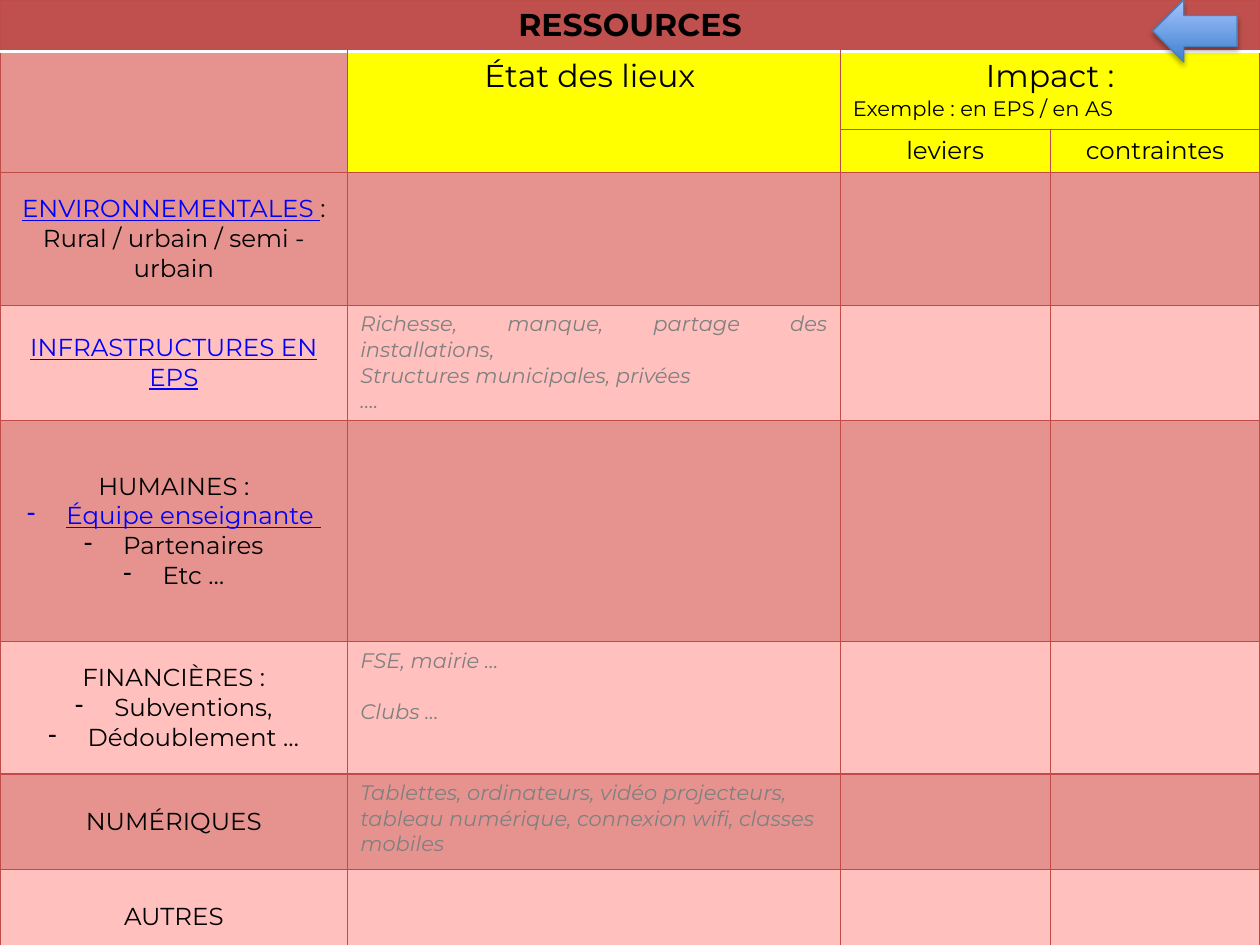
"""Build the RESSOURCES slide: a table of school resources and a back arrow."""
from dataclasses import dataclass

import lxml.etree
import pptx
import pptx.dml.color
import pptx.enum.shapes
import pptx.enum.text
import pptx.oxml
import pptx.oxml.ns
import pptx.table
import pptx.util

Cm = pptx.util.Cm
Pt = pptx.util.Pt
Align = pptx.enum.text.PP_ALIGN
Anchor = pptx.enum.text.MSO_ANCHOR
qn = pptx.oxml.ns.qn


@dataclass(frozen=True)
class Theme:
    font: str = "Montserrat"
    title_size: int = 18
    label_size: int = 14
    note_size: int = 12
    text: str = "000000"
    link: str = "0000FF"
    note: str = "808080"
    title_fill: str = "C0504D"
    header_fill: str = "FFFF00"
    dark_band: str = "E69390"
    light_band: str = "FFC0BE"
    border: str = "BF4C48"
    title_rule: str = "FFFFFF"
    border_width: float = 0.75
    title_rule_width: float = 2
    arrow_bottom: str = "3F80CE"
    arrow_top: str = "A4C4FF"
    arrow_line: str = "4B7EBC"


THEME = Theme()


@dataclass(frozen=True)
class Line:
    text: str = ""
    link: str = ""
    size: int = THEME.label_size
    color: str = THEME.text
    align: Align = Align.CENTER
    bold: bool = False
    italic: bool = False
    bullet: bool = False
    space_before: float = 0


@dataclass(frozen=True)
class Resource:
    height: float
    label: tuple[Line, ...]
    notes: tuple[Line, ...] = ()


def note(text: str, align: Align = Align.LEFT, space_before: float = 0) -> Line:
    return Line(text, size=THEME.note_size, color=THEME.note, align=align,
                italic=True, space_before=space_before)


COLUMN_WIDTHS = (7.01, 9.93, 4.23, 4.23)
HEADER_HEIGHTS = (1.02, 1.58, 0.87)
HEADERS = {
    (0, 0): (Line("RESSOURCES", size=THEME.title_size, bold=True),),
    (1, 1): (Line("État des lieux ", size=THEME.title_size),),
    (1, 2): (Line("Impact :", size=THEME.title_size),
             Line("Exemple : en EPS / en AS", size=THEME.note_size, align=Align.LEFT)),
    (2, 2): (Line("leviers"),),
    (2, 3): (Line("contraintes"),),
}
MERGES = (((0, 0), (0, 3)), ((1, 0), (2, 0)), ((1, 1), (2, 1)), ((1, 2), (1, 3)))
RESOURCES = (
    Resource(2.67, (Line(": Rural / urbain / semi - urbain", link="ENVIRONNEMENTALES "),)),
    Resource(2.32, (Line(link="INFRASTRUCTURES EN EPS"),), (
        note("Richesse, manque, partage des installations,", Align.JUSTIFY),
        note("Structures municipales, privées", Align.JUSTIFY),
        note("….", Align.JUSTIFY))),
    Resource(4.46, (Line("HUMAINES :"), Line(link="Équipe enseignante ", bullet=True),
                    Line("Partenaires", bullet=True), Line("Etc …", bullet=True))),
    Resource(2.67, (Line("FINANCIÈRES :"), Line("Subventions,", bullet=True),
                    Line("Dédoublement …", bullet=True)),
             (note("FSE, mairie …"), note("Clubs …", space_before=14.6))),
    Resource(1.92, (Line("NUMÉRIQUES"),), (
        note("Tablettes, ordinateurs, vidéo projecteurs, tableau numérique, "
             "connexion wifi, classes mobiles"),)),
    Resource(1.9, (Line("AUTRES"),)),
)


def rgb(color: str) -> pptx.dml.color.RGBColor:
    return pptx.dml.color.RGBColor.from_string(color)


def write_lines(cell: pptx.table._Cell, lines: tuple[Line, ...]) -> None:
    frame = cell.text_frame
    for index, line in enumerate(lines):
        paragraph = frame.add_paragraph() if index else frame.paragraphs[0]
        paragraph.alignment = line.align
        paragraph.space_before = Pt(line.space_before)
        if line.bullet:
            properties = paragraph._p.get_or_add_pPr()
            properties.set("marL", str(Cm(0.79)))
            properties.set("indent", str(Cm(-0.79)))
            lxml.etree.SubElement(properties, qn("a:buChar")).set("char", "-")
        paragraph.font.name = THEME.font
        paragraph.font.size = Pt(line.size)
        paragraph.font.bold = line.bold
        paragraph.font.italic = line.italic
        paragraph.font.color.rgb = rgb(line.color)
        if line.link:
            link = paragraph.add_run()
            link.text = line.link
            link.font.underline = True
            link.font.color.rgb = rgb(THEME.link)
        if line.text:
            paragraph.add_run().text = line.text


def style_cell(cell: pptx.table._Cell, row: int, fill: str) -> None:
    properties = cell._tc.get_or_add_tcPr()
    for side in "LRTB":
        on_title_rule = (row, side) in ((0, "B"), (1, "T"))
        color = THEME.title_rule if on_title_rule else THEME.border
        width = THEME.title_rule_width if on_title_rule else THEME.border_width
        border = lxml.etree.SubElement(properties, qn(f"a:ln{side}"), w=str(Pt(width)))
        solid = lxml.etree.SubElement(border, qn("a:solidFill"))
        lxml.etree.SubElement(solid, qn("a:srgbClr"), val=color)
    cell.fill.solid()
    cell.fill.fore_color.rgb = rgb(fill)


def fill_for(row: int, column: int) -> str:
    if row == 0:
        return THEME.title_fill
    if row < len(HEADER_HEIGHTS):
        return THEME.header_fill if column else THEME.dark_band
    return THEME.light_band if (row - len(HEADER_HEIGHTS)) % 2 else THEME.dark_band


def add_resource_table(slide: pptx.slide.Slide) -> None:
    heights = HEADER_HEIGHTS + tuple(resource.height for resource in RESOURCES)
    table = slide.shapes.add_table(len(heights), len(COLUMN_WIDTHS), 0, 0,
                                   Cm(sum(COLUMN_WIDTHS)), Cm(sum(heights))).table
    table.first_row = table.horz_banding = False
    for column, width in zip(table.columns, COLUMN_WIDTHS):
        column.width = Cm(width)
    for row, height in zip(table.rows, heights):
        row.height = Cm(height)
    for row in range(len(heights)):
        for column in range(len(COLUMN_WIDTHS)):
            style_cell(table.cell(row, column), row, fill_for(row, column))
    for first, last in MERGES:
        table.cell(*first).merge(table.cell(*last))
    for position, lines in HEADERS.items():
        write_lines(table.cell(*position), lines)
    for row, resource in enumerate(RESOURCES, len(HEADER_HEIGHTS)):
        table.cell(row, 0).vertical_anchor = Anchor.MIDDLE
        write_lines(table.cell(row, 0), resource.label)
        write_lines(table.cell(row, 1), resource.notes)


def add_back_arrow(slide: pptx.slide.Slide) -> None:
    arrow = slide.shapes.add_shape(pptx.enum.shapes.MSO_SHAPE.LEFT_ARROW,
                                   Cm(23.24), 0, Cm(1.7), Cm(1.25))
    arrow.fill.gradient()
    arrow.fill.gradient_angle = 90
    for stop, color in zip(arrow.fill.gradient_stops, (THEME.arrow_bottom, THEME.arrow_top)):
        stop.color.rgb = rgb(color)
    arrow.line.color.rgb = rgb(THEME.arrow_line)
    arrow.line.width = Pt(THEME.border_width)
    arrow.shadow.inherit = False
    effects = arrow._element.spPr.find(qn("a:effectLst"))
    shadow = lxml.etree.SubElement(effects, qn("a:outerShdw"), blurRad=str(Pt(3.1)),
                                   dist=str(Pt(1.8)), dir="5400000", rotWithShape="0")
    shade = lxml.etree.SubElement(shadow, qn("a:srgbClr"), val=THEME.text)
    lxml.etree.SubElement(shade, qn("a:alpha"), val="35000")


def main() -> None:
    presentation = pptx.Presentation()
    presentation.slide_width = Cm(25.4)
    presentation.slide_height = Cm(19.05)
    slide = presentation.slides.add_slide(presentation.slide_layouts[6])
    add_resource_table(slide)
    add_back_arrow(slide)
    presentation.save("out.pptx")


if __name__ == "__main__":
    main()
